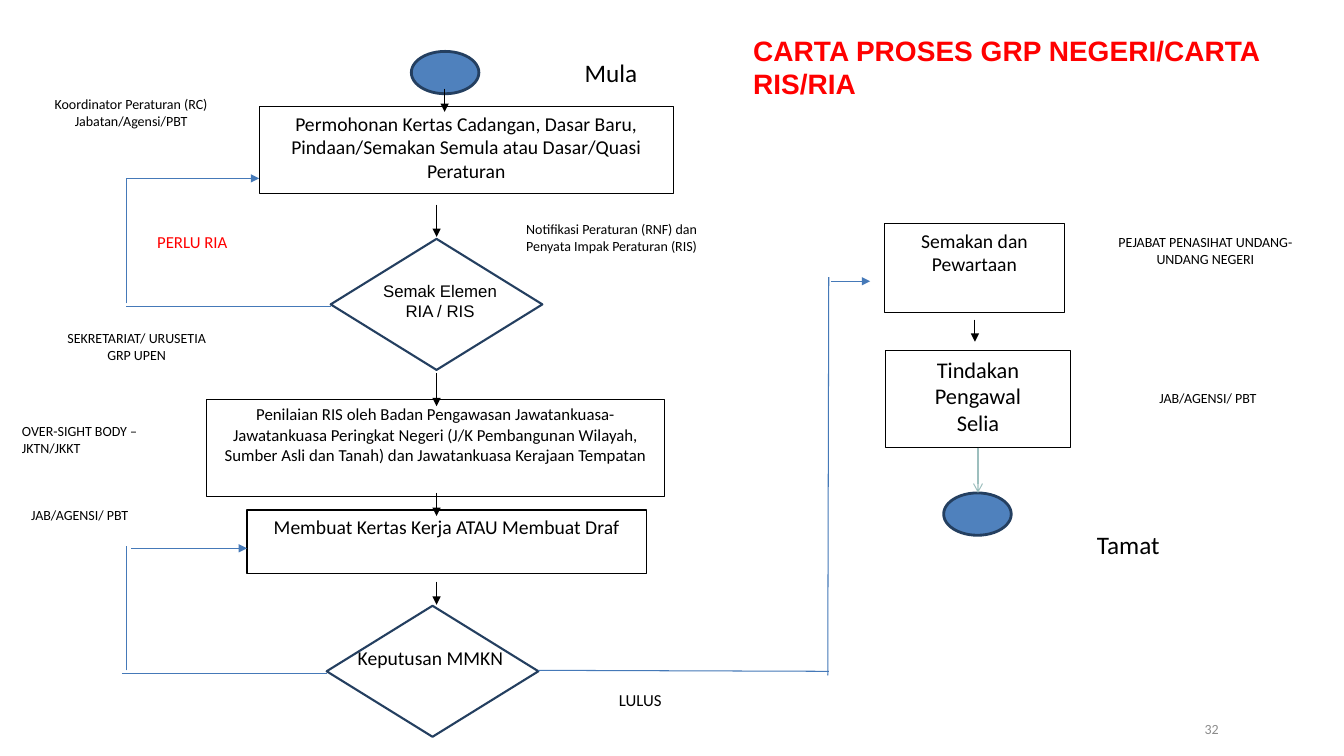
from dataclasses import dataclass
from typing import Optional

from lxml.etree import SubElement
from pptx import Presentation
from pptx.dml.color import RGBColor
from pptx.enum.shapes import MSO_CONNECTOR, MSO_SHAPE
from pptx.enum.text import MSO_ANCHOR, PP_ALIGN
from pptx.oxml import parse_xml
from pptx.oxml.ns import qn
from pptx.util import Emu, Pt

PX = 9144
BLACK, RED, GREY = "000000", "FF0000", "8C8C8C"
NAVY, BLUE, FLOW_BLUE, PALE_TEAL = "243F60", "4F81BD", "4579B8", "9DBFBE"
LEFT, CENTER = PP_ALIGN.LEFT, PP_ALIGN.CENTER
TOP, MIDDLE = MSO_ANCHOR.TOP, MSO_ANCHOR.MIDDLE
TEXT_SHADOW = (
    '<a:effectLst xmlns:a="http://schemas.openxmlformats.org/drawingml/2006/main">'
    '<a:outerShdw blurRad="38100" dist="38100" dir="2700000" algn="tl">'
    '<a:srgbClr val="C0C0C0"/></a:outerShdw></a:effectLst>'
)


@dataclass
class Step:
    left: int
    top: int
    width: int
    height: int
    text: str = ""
    size: int = 14
    preset: MSO_SHAPE = MSO_SHAPE.RECTANGLE
    outline: str = BLACK
    weight: float = 0.75
    fill: Optional[str] = None


@dataclass
class Label:
    left: int
    top: int
    width: int
    height: int
    text: str
    size: int = 10
    align: PP_ALIGN = CENTER
    color: str = BLACK
    anchor: MSO_ANCHOR = TOP
    font: str = "Calibri"
    shadow: bool = False


@dataclass
class Flow:
    x1: int
    y1: int
    x2: int
    y2: int
    color: str = FLOW_BLUE
    head: Optional[str] = None


def px(length: int) -> Emu:
    return Emu(length * PX)


def rgb(color: str) -> RGBColor:
    return RGBColor.from_string(color)


def apply(target, values: dict) -> None:
    for name, value in values.items():
        setattr(target, name, value)


def place(item) -> list:
    return [px(n) for n in (item.left, item.top, item.width, item.height)]


def write(frame, text: str, size: int, align=CENTER, color: str = BLACK,
          anchor=TOP, font: str = "Calibri", bold: bool = False) -> None:
    apply(frame, {"word_wrap": True, "vertical_anchor": anchor, "text": text})
    for paragraph in frame.paragraphs:
        paragraph.alignment = align
        for run in paragraph.runs:
            apply(run.font, {"size": Pt(size), "name": font, "bold": bold})
            run.font.color.rgb = rgb(color)


def draw_step(slide, step: Step) -> None:
    shape = slide.shapes.add_shape(step.preset, *place(step))
    shape.shadow.inherit = False
    if step.fill:
        shape.fill.solid()
        shape.fill.fore_color.rgb = rgb(step.fill)
    else:
        shape.fill.background()
    shape.line.color.rgb = rgb(step.outline)
    shape.line.width = Pt(step.weight)
    if step.text:
        write(shape.text_frame, step.text, step.size)


def draw_label(slide, label: Label) -> None:
    frame = slide.shapes.add_textbox(*place(label)).text_frame
    write(frame, label.text, label.size, label.align, label.color, label.anchor, label.font)
    if label.shadow:
        for paragraph in frame.paragraphs:
            for run in paragraph.runs:
                run.font._element.insert(1, parse_xml(TEXT_SHADOW))


def draw_flow(slide, flow: Flow) -> None:
    ends = [px(n) for n in (flow.x1, flow.y1, flow.x2, flow.y2)]
    connector = slide.shapes.add_connector(MSO_CONNECTOR.STRAIGHT, *ends)
    connector.line.color.rgb = rgb(flow.color)
    connector.line.width = Pt(0.75)
    if flow.head:
        SubElement(connector.line._get_or_add_ln(), qn("a:tailEnd"), type=flow.head)
    SubElement(connector._element.spPr, qn("a:effectLst"))


def terminal(left: int, top: int) -> Step:
    return Step(left, top, 67, 42, preset=MSO_SHAPE.OVAL, outline=NAVY, weight=2, fill=BLUE)


def decision(left: int, top: int) -> Step:
    return Step(left, top, 210, 130, preset=MSO_SHAPE.DIAMOND, outline=NAVY, weight=1.5)


def down(x: int, y1: int, y2: int) -> Flow:
    return Flow(x, y1, x, y2, BLACK, "triangle")


STEPS = [
    terminal(408, 51),
    Step(257, 106, 411, 86, "Permohonan Kertas Cadangan, Dasar Baru, "
         "Pindaan/Semakan Semula atau Dasar/Quasi Peraturan"),
    decision(328, 237),
    Step(205, 396, 454, 97, "Penilaian RIS oleh Badan Pengawasan Jawatankuasa-Jawatankuasa "
         "Peringkat Negeri (J/K Pembangunan Wilayah, Sumber Asli dan Tanah) "
         "dan Jawatankuasa Kerajaan Tempatan", 12),
    Step(245, 506, 396, 63, "Membuat Kertas Kerja ATAU Membuat Draf"),
    decision(324, 601),
    Step(877, 222, 179, 88, "Semakan dan Pewartaan"),
    Step(878, 348, 184, 96, "Tindakan Pengawal\nSelia", 16),
    terminal(936, 489),
]

LABELS = [
    Label(570, 52, 150, 40, "Mula", 18, LEFT),
    Label(1078, 520, 117, 40, "Tamat", 18, LEFT),
    Label(146, 225, 111, 30, "PERLU RIA", 12, LEFT, RED),
    Label(604, 679, 111, 30, "LULUS", 12, LEFT),
    Label(293, 259, 287, 78, "Semak Elemen\nRIA / RIS", 12, anchor=MIDDLE,
          font="Arial", shadow=True),
    Label(327, 636, 200, 34, "Keputusan MMKN", 14),
    Label(2, 90, 256, 44, "Koordinator Peraturan (RC) Jabatan/Agensi/PBT"),
    Label(512, 214, 229, 66, "Notifikasi Peraturan (RNF) dan Penyata Impak Peraturan (RIS)",
          align=LEFT),
    Label(49, 322, 173, 61, "SEKRETARIAT/ URUSETIA GRP UPEN"),
    Label(12, 414, 190, 44, "OVER-SIGHT BODY – JKTN/JKKT", align=LEFT),
    Label(12, 498, 134, 27, "JAB/AGENSI/ PBT"),
    Label(1131, 382, 134, 27, "JAB/AGENSI/ PBT"),
    Label(1086, 227, 219, 64, "PEJABAT PENASIHAT UNDANG-UNDANG NEGERI"),
    Label(1185, 708, 106, 30, "32", 10, LEFT, GREY, MIDDLE),
]

FLOWS = [
    down(441, 88, 111),
    down(433, 203, 235),
    down(433, 370, 403),
    down(433, 489, 512),
    down(433, 577, 600),
    down(967, 317, 339),
    Flow(970, 444, 970, 489, PALE_TEAL, "arrow"),
    Flow(125, 304, 328, 304),
    Flow(125, 301, 125, 177),
    Flow(125, 177, 257, 177, head="triangle"),
    Flow(121, 668, 324, 668),
    Flow(125, 665, 125, 542),
    Flow(130, 544, 245, 544, head="triangle"),
    Flow(534, 665, 822, 666),
    Flow(821, 670, 822, 275),
    Flow(824, 279, 863, 279, head="triangle"),
]


def main() -> None:
    deck = Presentation()
    apply(deck, {"slide_width": px(1333), "slide_height": px(750)})
    slide = deck.slides.add_slide(deck.slide_layouts[5])

    heading = slide.shapes.title
    apply(heading, {"left": px(737), "top": px(28), "width": px(567), "height": px(108)})
    write(heading.text_frame, "CARTA PROSES GRP NEGERI/CARTA RIS/RIA", 20, LEFT, RED,
          font="Arial", bold=True)

    for step in STEPS:
        draw_step(slide, step)
    for label in LABELS:
        draw_label(slide, label)
    for flow in FLOWS:
        draw_flow(slide, flow)
    deck.save("out.pptx")


if __name__ == "__main__":
    main()
